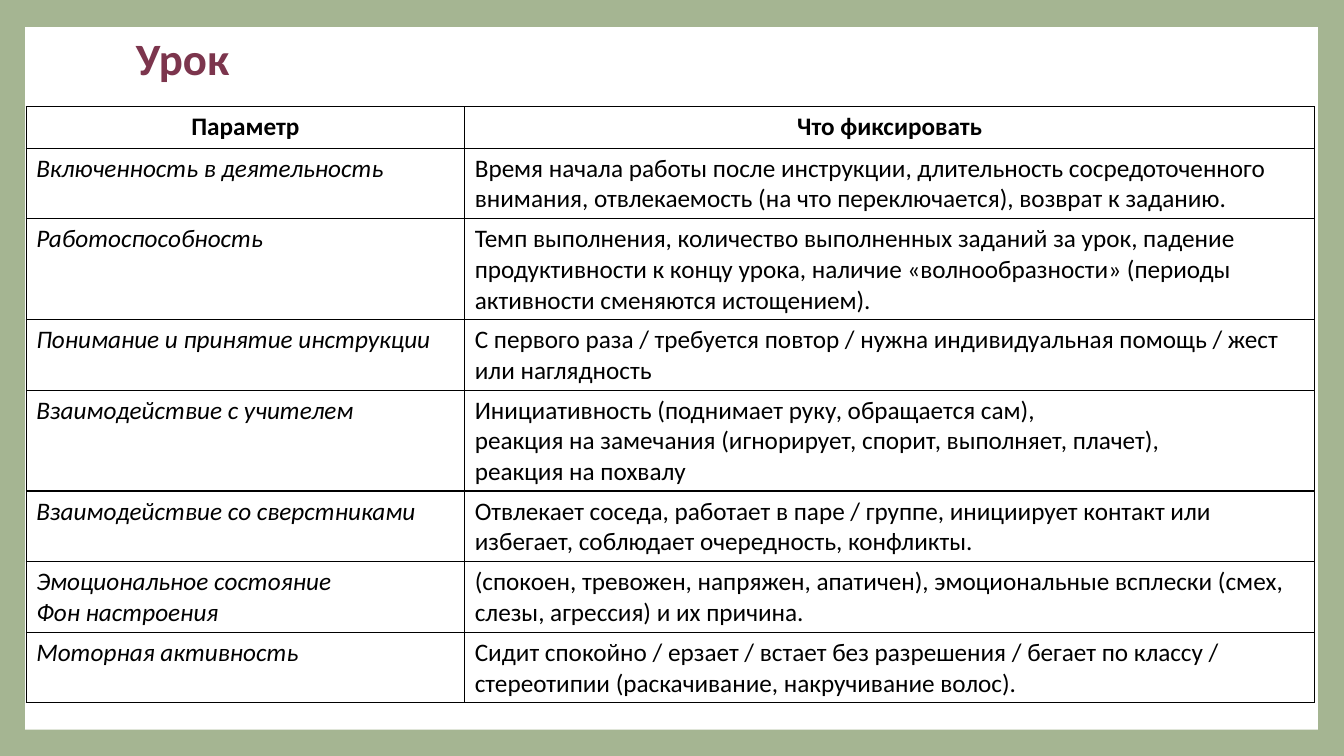
from dataclasses import dataclass

from lxml.etree import SubElement
from pptx import Presentation
from pptx.dml.color import RGBColor
from pptx.enum.shapes import MSO_SHAPE as Shape
from pptx.enum.text import MSO_ANCHOR as Anchor, PP_ALIGN as Align
from pptx.oxml.ns import qn
from pptx.slide import Slide
from pptx.table import _Cell as Cell
from pptx.text.text import TextFrame
from pptx.util import Inches, Pt

GREEN = RGBColor(0xA5, 0xB5, 0x92)
WHITE = RGBColor(0xFF, 0xFF, 0xFF)
PLUM = RGBColor(0x7C, 0x35, 0x4D)
BLACK = RGBColor(0x00, 0x00, 0x00)
FONT = "Calibri"
COLUMN_WIDTHS = (4.35, 8.43)
ROW_HEIGHT = 0.41


@dataclass(frozen=True)
class Observation:
    parameter: str
    record: str


HEADING = Observation("Параметр", "Что фиксировать")
OBSERVATIONS = [
    Observation(
        "Включенность в деятельность",
        "Время начала работы после инструкции, длительность сосредоточенного внимания, "
        "отвлекаемость (на что переключается), возврат к заданию.",
    ),
    Observation(
        "Работоспособность",
        "Темп выполнения, количество выполненных заданий за урок, падение продуктивности "
        "к концу урока, наличие «волнообразности» (периоды активности сменяются истощением).",
    ),
    Observation(
        "Понимание и принятие инструкции",
        "С первого раза / требуется повтор / нужна индивидуальная помощь / жест или наглядность",
    ),
    Observation(
        "Взаимодействие с учителем",
        "Инициативность (поднимает руку, обращается сам),\n"
        "реакция на замечания (игнорирует, спорит, выполняет, плачет),\n"
        "реакция на похвалу",
    ),
    Observation(
        "Взаимодействие со сверстниками",
        "Отвлекает соседа, работает в паре / группе, инициирует контакт или избегает, "
        "соблюдает очередность, конфликты.",
    ),
    Observation(
        "Эмоциональное состояние\nФон настроения",
        "(спокоен, тревожен, напряжен, апатичен), эмоциональные всплески "
        "(смех, слезы, агрессия) и их причина.",
    ),
    Observation(
        "Моторная активность",
        "Сидит спокойно / ерзает / встает без разрешения / бегает по классу / "
        "стереотипии (раскачивание, накручивание волос).",
    ),
]


def write_text(
    frame: TextFrame,
    text: str,
    *,
    size: float = 18,
    color: RGBColor = BLACK,
    bold: bool = False,
    italic: bool = False,
    align: Align = Align.LEFT,
    line_spacing: float = 1.0,
) -> None:
    frame.word_wrap = True
    frame.text = text
    for paragraph in frame.paragraphs:
        paragraph.alignment = align
        paragraph.line_spacing = line_spacing
        for run in paragraph.runs:
            run.font.name = FONT
            run.font.size = Pt(size)
            run.font.color.rgb = color
            run.font.bold = bold
            run.font.italic = italic


def draw_borders(cell: Cell) -> None:
    properties = cell._tc.get_or_add_tcPr()
    for side in ("a:lnL", "a:lnR", "a:lnT", "a:lnB"):
        line = SubElement(properties, qn(side), w=str(Pt(1)))
        fill = SubElement(line, qn("a:solidFill"))
        SubElement(fill, qn("a:srgbClr"), val=str(BLACK))


def add_panel(slide: Slide) -> None:
    panel = slide.shapes.add_shape(
        Shape.RECTANGLE, Inches(0.25), Inches(0.27), Inches(12.82), Inches(6.97)
    )
    panel.shadow.inherit = False
    panel.fill.solid()
    panel.fill.fore_color.rgb = WHITE
    panel.line.fill.background()


def add_title(slide: Slide) -> None:
    title = slide.shapes.add_textbox(Inches(1.25), Inches(0.31), Inches(1.59), Inches(0.6))
    title.text_frame.vertical_anchor = Anchor.MIDDLE
    write_text(title.text_frame, "Урок", size=32, color=PLUM, bold=True, line_spacing=0.9)


def add_observation_table(slide: Slide) -> None:
    rows = [HEADING, *OBSERVATIONS]
    table = slide.shapes.add_table(
        len(rows),
        len(COLUMN_WIDTHS),
        Inches(0.26),
        Inches(1.06),
        Inches(sum(COLUMN_WIDTHS)),
        Inches(ROW_HEIGHT * len(rows)),
    ).table
    table.horz_banding = False
    for column, width in zip(table.columns, COLUMN_WIDTHS):
        column.width = Inches(width)
    for row, observation in zip(table.rows, rows):
        is_heading = observation is HEADING
        row.height = Inches(ROW_HEIGHT)
        parameter, record = row.cells
        for cell, text in ((parameter, observation.parameter), (record, observation.record)):
            draw_borders(cell)
            cell.fill.background()
            write_text(
                cell.text_frame,
                text,
                bold=is_heading,
                italic=text == observation.parameter and not is_heading,
                align=Align.CENTER if is_heading else Align.LEFT,
            )


def main() -> None:
    presentation = Presentation()
    presentation.slide_width = Inches(13.33)
    presentation.slide_height = Inches(7.5)
    slide = presentation.slides.add_slide(presentation.slide_layouts[6])
    slide.background.fill.solid()
    slide.background.fill.fore_color.rgb = GREEN
    add_panel(slide)
    add_title(slide)
    add_observation_table(slide)
    presentation.save("out.pptx")


if __name__ == "__main__":
    main()
